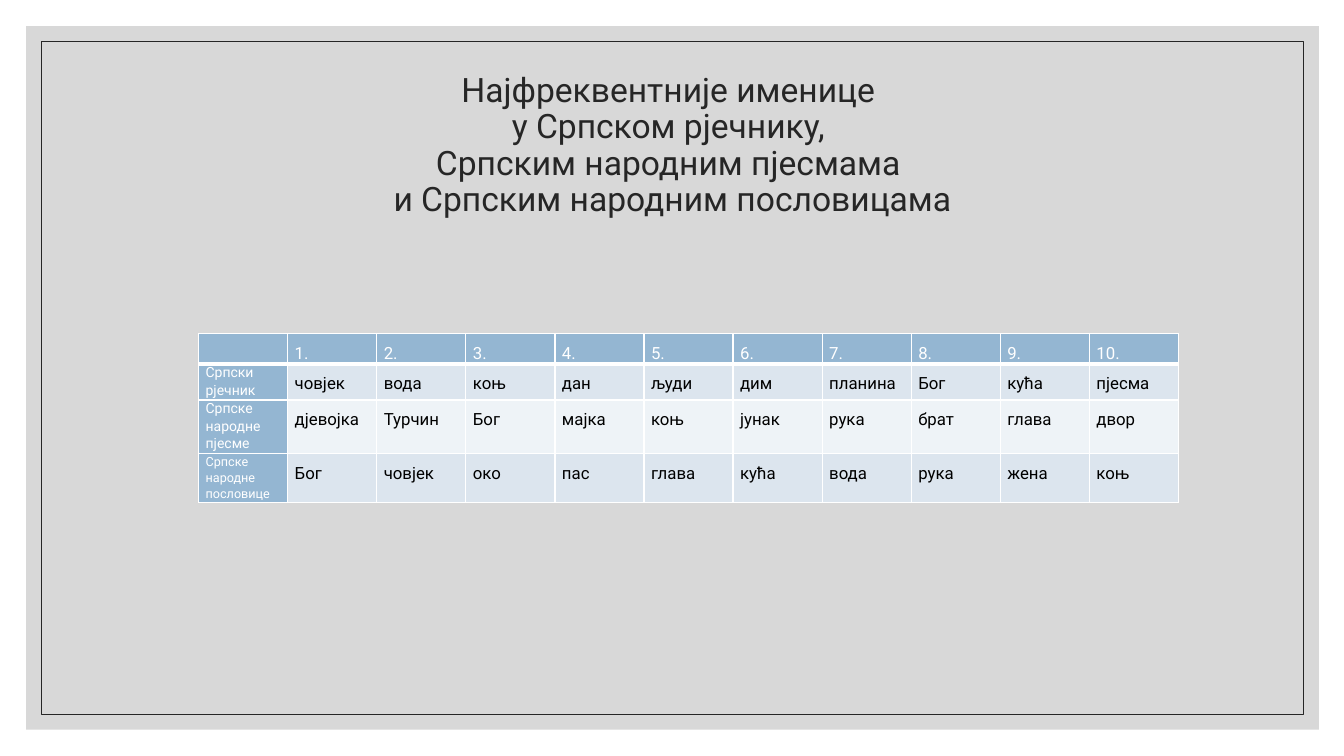
"""Build a slide with a table of the most frequent nouns in three Serbian works."""
import lxml.etree
import pptx
import pptx.dml.color
import pptx.enum.shapes
import pptx.enum.text
import pptx.oxml.ns
import pptx.util

PX = 9144
FONT = "Roboto"
WHITE, BLACK, DARK, GREY = "FFFFFF", "000000", "262626", "BFBFBF"
HEADER_BLUE, BAND_BLUE, BAND_PALE = "94B6D2", "DCE5EE", "EEF3F7"


def color(value):
    return pptx.dml.color.RGBColor.from_string(value)


def style_runs(para, size, value):
    for span in para.runs:
        span.font.name = FONT
        span.font.size = pptx.util.Pt(size)
        span.font.color.rgb = color(value)


deck = pptx.Presentation()
deck.slide_width = 1333 * PX
deck.slide_height = 750 * PX
page = deck.slides.add_slide(deck.slide_layouts[6])

RECTANGLE = pptx.enum.shapes.MSO_SHAPE.RECTANGLE
panel = page.shapes.add_shape(RECTANGLE, 26 * PX, 26 * PX, 1282 * PX, 698 * PX)
panel.shadow.inherit = False
panel.fill.solid()
panel.fill.fore_color.rgb = color(GREY)
panel.line.fill.background()
panel_color = panel.fill._xPr.find(".//" + pptx.oxml.ns.qn("a:srgbClr"))
lxml.etree.SubElement(panel_color, pptx.oxml.ns.qn("a:alpha"), val="60000")

frame = page.shapes.add_shape(RECTANGLE, 41 * PX, 41 * PX, 1252 * PX, 668 * PX)
frame.shadow.inherit = False
frame.fill.background()
frame.line.color.rgb = color(DARK)
frame.line.width = pptx.util.Pt(0.5)

title = page.shapes.add_textbox(117 * PX, 70 * PX, 1100 * PX, 150 * PX)
title.text_frame.word_wrap = True
title.text_frame.vertical_anchor = pptx.enum.text.MSO_ANCHOR.MIDDLE
para = title.text_frame.paragraphs[0]
para.text = "\v".join([
    "Најфреквентније именице ",
    "у Српском рјечнику, ",
    "Српским народним пјесмама ",
    "и Српским народним пословицама",
])
para.alignment = pptx.enum.text.PP_ALIGN.CENTER
para.line_spacing = 0.9
style_runs(para, 24, DARK)

rows = [
    ["", *[f"{rank}." for rank in range(1, 11)]],
    ["Српски рјечник", "човјек", "вода", "коњ", "дан", "људи", "дим",
     "планина", "Бог ", "кућа", "пјесма"],
    ["Српске народне пјесме", "дјевојка", "Турчин", "Бог", "мајка", "коњ", "јунак",
     "рука", "брат", "глава", "двор"],
    ["Српске народне пословице", "Бог", "човјек", "око", "пас", "глава", "кућа",
     "вода", "рука", "жена", "коњ"],
]
row_heights = [29, 35, 52, 46]
row_fills = [HEADER_BLUE, BAND_BLUE, BAND_PALE, BAND_BLUE]
label_sizes = [12, 10, 10, 9]

holder = page.shapes.add_table(4, 11, 197 * PX, 331 * PX, 972 * PX, 162 * PX)
table = holder.table
table.first_row = False
table.horz_banding = False
for column in table.columns:
    column.width = 972 * PX // 11

for row_index, words in enumerate(rows):
    table.rows[row_index].height = row_heights[row_index] * PX
    for column_index, word in enumerate(words):
        cell = table.cell(row_index, column_index)
        is_label = column_index == 0
        is_heading = row_index == 0 or is_label
        cell.margin_left = cell.margin_right = 7 * PX
        cell.margin_top = cell.margin_bottom = 0

        para = cell.text_frame.paragraphs[0]
        para.add_run().text = word
        para.alignment = pptx.enum.text.PP_ALIGN.JUSTIFY
        para.line_spacing = 1.07 if is_label else 1.5
        style_runs(para, label_sizes[row_index] if is_label else 12,
                   WHITE if is_heading else BLACK)

        properties = cell._tc.get_or_add_tcPr()
        for side in ("L", "R", "T", "B"):
            points = 3 if row_index == 0 and side == "B" else 1
            border = lxml.etree.SubElement(
                properties, pptx.oxml.ns.qn(f"a:ln{side}"), w=str(pptx.util.Pt(points)))
            paint = lxml.etree.SubElement(border, pptx.oxml.ns.qn("a:solidFill"))
            lxml.etree.SubElement(paint, pptx.oxml.ns.qn("a:srgbClr"), val=WHITE)
        cell.fill.solid()
        cell.fill.fore_color.rgb = color(HEADER_BLUE if is_heading else row_fills[row_index])

deck.save("out.pptx")
